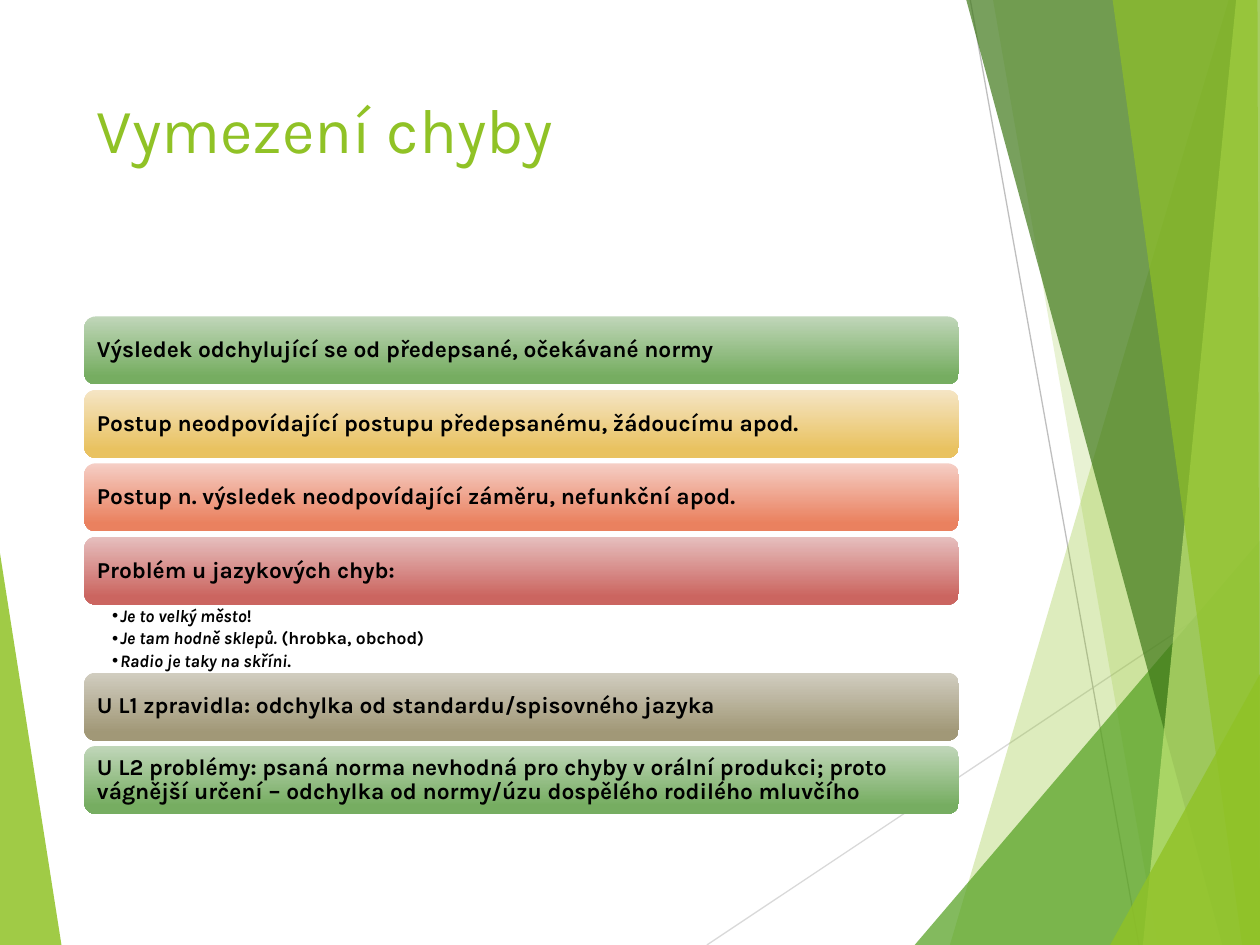
from dataclasses import dataclass

from lxml import etree
from pptx import Presentation
from pptx import util as u
from pptx.dml.color import RGBColor
from pptx.enum import shapes, text
from pptx.oxml.ns import qn

FONT = "Karla"
LEFT, WIDTH = 1.7, 17.63
BAR_HEIGHT, BAR_GAP, BARS_TOP = 1.37, 0.11, 6.38
RIGHT, BOTTOM = 25.4, 19.05


@dataclass
class Facet:
    color: str
    opacity: int
    points: list[tuple[float, float]]


@dataclass
class Bar:
    wording: str
    light: str
    dark: str


FACETS = [
    Facet("90C226", 85, [(0, 11.15), (1.24, BOTTOM), (0, BOTTOM)]),
    Facet("90C226", 30, [(24.77, 0), (19.15, BOTTOM), (RIGHT, BOTTOM), (RIGHT, 0)]),
    Facet("90C226", 20, [(20.02, 0), (23.34, BOTTOM), (RIGHT, BOTTOM), (RIGHT, 0)]),
    Facet("54A021", 72, [(18.44, BOTTOM), (RIGHT, 10.9), (RIGHT, BOTTOM)]),
    Facet("3F7819", 70, [(19.48, 0), (24.64, BOTTOM), (RIGHT, BOTTOM), (RIGHT, 0)]),
    Facet("C0E474", 70, [(24.92, 0), (23.04, BOTTOM), (RIGHT, BOTTOM), (RIGHT, 0)]),
    Facet("90C226", 65, [(22.43, 0), (25.04, BOTTOM), (RIGHT, BOTTOM), (25.35, 0)]),
    Facet("90C226", 80, [(22.38, BOTTOM), (RIGHT, 13.59), (RIGHT, BOTTOM)]),
]
BARS_ABOVE = [
    Bar("Výsledek odchylující se od předepsané, očekávané normy", "C0D6B9", "76AD61"),
    Bar("Postup neodpovídající postupu předepsanému, žádoucímu apod.", "F5E5C5", "E9C260"),
    Bar("Postup n. výsledek neodpovídající záměru, nefunkční apod.", "F5CEC5", "EA815F"),
    Bar("Problém u jazykových chyb:", "E6BFBE", "CB6560"),
]
EXAMPLES = [
    ("Je to velký město", "!"),
    ("Je tam hodně sklepů.", " (hrobka, obchod)"),
    ("Radio je taky na skříni", "."),
]
BARS_BELOW = [
    Bar("U L1 zpravidla: odchylka od standardu/spisovného jazyka", "D1CDC0", "A19877"),
    Bar("U L2 problémy: psaná norma nevhodná pro chyby v orální produkci; proto vágnější "
        "určení – odchylka od normy/úzu dospělého rodilého mluvčího", "C0D6B9", "76AD61"),
]


def rgb(value: str) -> RGBColor:
    return RGBColor.from_string(value)


def add_text(para, wording: str, *, size: float, color: str = "000000",
             bold: bool = False, italic: bool = False) -> None:
    span = para.add_run()
    span.text = wording
    font = span.font
    font.name, font.size, font.bold, font.italic = FONT, u.Pt(size), bold, italic
    font.color.rgb = rgb(color)


def set_frame(frame, anchor, insets: tuple[float, float, float, float]) -> None:
    frame.word_wrap = True
    frame.auto_size = text.MSO_AUTO_SIZE.NONE
    frame.vertical_anchor = anchor
    (frame.margin_left, frame.margin_top,
     frame.margin_right, frame.margin_bottom) = map(u.Cm, insets)


def place(box, top: float, height: float) -> None:
    box.left, box.top = u.Cm(LEFT), u.Cm(top)
    box.width, box.height = u.Cm(WIDTH), u.Cm(height)


def add_facet(page, facet: Facet) -> None:
    start, *others = [(u.Cm(x), u.Cm(y)) for x, y in facet.points]
    builder = page.shapes.build_freeform(*start)
    builder.add_line_segments(others, close=True)
    shape = builder.convert_to_shape()
    shape.shadow.inherit = False
    shape.line.fill.background()
    shape.fill.solid()
    shape.fill.fore_color.rgb = rgb(facet.color)
    for color in shape.element.spPr.iter(qn("a:srgbClr")):
        etree.SubElement(color, qn("a:alpha"), val=str(facet.opacity * 1000))


def add_line(page, start: tuple[float, float], end: tuple[float, float], color: str) -> None:
    line = page.shapes.add_connector(shapes.MSO_CONNECTOR.STRAIGHT,
                                     *map(u.Cm, start + end))
    line.line.color.rgb = rgb(color)
    line.line.width = u.Pt(0.75)
    etree.SubElement(line.element.spPr, qn("a:effectLst"))


def add_bars(page, bars: list[Bar], top: float) -> float:
    """Stack bars from top down and return the lower edge of the last one."""
    for index, bar in enumerate(bars):
        y = top + index * (BAR_HEIGHT + BAR_GAP)
        box = page.shapes.add_shape(shapes.MSO_SHAPE.ROUNDED_RECTANGLE, 0, 0, 0, 0)
        place(box, y, BAR_HEIGHT)
        box.shadow.inherit = False
        box.line.fill.background()
        box.fill.gradient()
        box.fill.gradient_angle = 270
        for stop, color, position in zip(box.fill.gradient_stops,
                                         (bar.light, bar.dark), (0, 0.88)):
            stop.color.rgb = rgb(color)
            stop.position = position
        set_frame(box.text_frame, text.MSO_ANCHOR.MIDDLE, (0.19, 0.13, 0.19, 0.13))
        para = box.text_frame.paragraphs[0]
        para.alignment = text.PP_ALIGN.LEFT
        para.line_spacing = 0.9
        add_text(para, bar.wording, size=13, bold=True)
    return y + BAR_HEIGHT


def fill_examples(box, top: float) -> None:
    place(box, top, BAR_HEIGHT)
    frame = box.text_frame
    set_frame(frame, text.MSO_ANCHOR.TOP, (0.56, 0.05, 0.25, 0.05))
    for index, (quote, rest) in enumerate(EXAMPLES):
        para = frame.add_paragraph() if index else frame.paragraphs[0]
        para.level = 1
        props = para._p.get_or_add_pPr()
        props.set("marL", str(u.Cm(0.16)))
        props.set("indent", str(u.Cm(-0.16)))
        etree.SubElement(props, qn("a:buChar"), char="•")
        para.line_spacing = 0.9
        para.space_before, para.space_after = u.Pt(0), u.Pt(2)
        add_text(para, quote, size=10, bold=True, italic=True)
        add_text(para, rest, size=10, bold=True)


def main() -> None:
    deck = Presentation()
    deck.slide_width, deck.slide_height = u.Cm(RIGHT), u.Cm(BOTTOM)
    page = deck.slides.add_slide(deck.slide_layouts[1])
    title, body = page.placeholders

    # Background facets and thin lines
    add_facet(page, FACETS[0])
    add_line(page, (14.25, BOTTOM), (RIGHT, 11.62), "D9D9D9")
    add_line(page, (19.56, 0), (22.96, BOTTOM), "BFBFBF")
    for facet in FACETS[1:]:
        add_facet(page, facet)

    # Title
    place(title, 1.7, 3.66)
    set_frame(title.text_frame, text.MSO_ANCHOR.TOP, (0.25, 0.13, 0.25, 0.13))
    heading = title.text_frame.paragraphs[0]
    heading.alignment = text.PP_ALIGN.LEFT
    add_text(heading, "Vymezení chyby", size=36, color="90C226")

    # Bars with the examples between them
    examples_top = add_bars(page, BARS_ABOVE, BARS_TOP)
    fill_examples(body, examples_top)
    add_bars(page, BARS_BELOW, examples_top + BAR_HEIGHT)

    deck.save("out.pptx")


if __name__ == "__main__":
    main()
